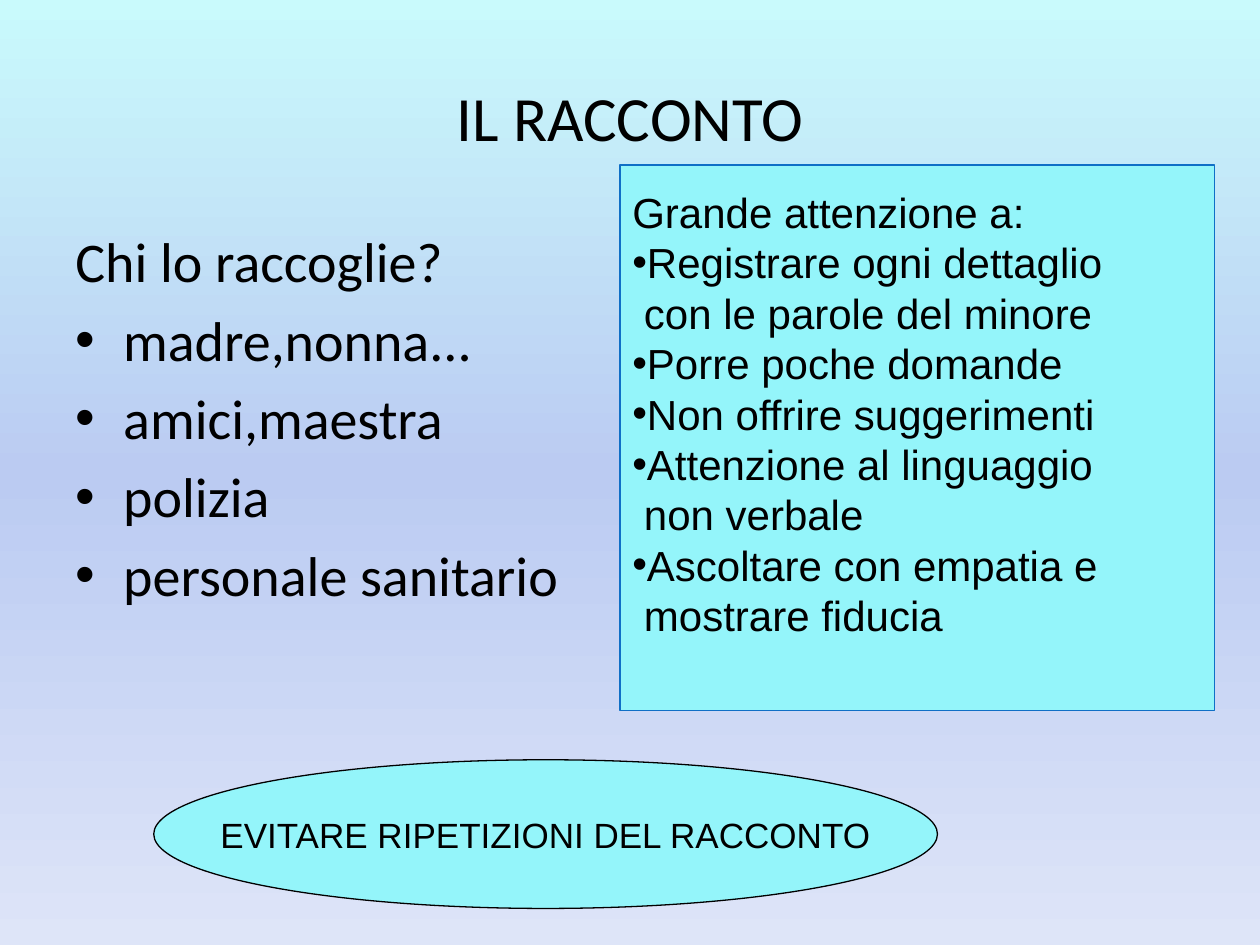
"""Build the slide IL RACCONTO."""
from lxml import etree
from pptx import Presentation
from pptx import util as u
from pptx.dml.color import RGBColor
from pptx.enum import shapes, text
from pptx.oxml import ns

TITLE = "IL RACCONTO"
COLLECTORS = [
    ("Chi lo raccoglie?", False),
    ("madre,nonna...", True),
    ("amici,maestra", True),
    ("polizia", True),
    ("personale sanitario", True),
]
ADVICE = [
    ("Grande attenzione a:", False),
    ("Registrare ogni dettaglio", True),
    (" con le parole del minore", False),
    ("Porre poche domande", True),
    ("Non offrire suggerimenti", True),
    ("Attenzione al linguaggio", True),
    (" non verbale", False),
    ("Ascoltare con empatia e", True),
    (" mostrare fiducia", False),
]
WARNING = "EVITARE RIPETIZIONI DEL RACCONTO"
BACKGROUND = [(0, "C9FAFC"), (50, "BBCBF2"), (100, "DEE5F8")]
BLACK, AQUA, BLUE = "000000", "94F5FA", "0F6FC6"
MIDDLE, TOP = text.MSO_ANCHOR.MIDDLE, text.MSO_ANCHOR.TOP
CENTER, LEFT = text.PP_ALIGN.CENTER, text.PP_ALIGN.LEFT


def color(value):
    return RGBColor.from_string(value)


def paint_background(s, stops):
    fill = s.background.fill
    fill.gradient()
    fill.gradient_angle = 270
    stop_list = s.element.find(".//" + ns.qn("a:gsLst"))
    for old in list(stop_list):
        stop_list.remove(old)
    for position, value in stops:
        stop = etree.SubElement(stop_list, ns.qn("a:gs"), pos=str(position * 1000))
        etree.SubElement(stop, ns.qn("a:srgbClr"), val=value)


def write(shape, lines, font, size, align=LEFT, anchor=TOP, indent=0, before=0):
    tf = shape.text_frame
    tf.word_wrap = True
    tf.vertical_anchor = anchor
    for i, (line, bulleted) in enumerate(lines):
        p = tf.add_paragraph() if i else tf.paragraphs[0]
        p.text = line
        p.alignment = align
        p.space_before = u.Pt(before)
        p.font.name, p.font.size = font, u.Pt(size)
        p.font.color.rgb = color(BLACK)
        pr = p._p.get_or_add_pPr()
        pr.set("marL", str(u.Inches(indent)))
        pr.set("indent", str(u.Inches(-indent)))
        if bulleted:
            bullet_font = etree.Element(ns.qn("a:buFont"), typeface="Arial")
            bullet = etree.Element(ns.qn("a:buChar"), char="•")
            pr.find(ns.qn("a:defRPr")).addprevious(bullet_font)
            bullet_font.addnext(bullet)
    return tf


def add_text(s, box):
    return s.shapes.add_textbox(*map(u.Inches, box))


def add_panel(s, kind, box, line):
    sp = s.shapes.add_shape(kind, *map(u.Inches, box))
    sp.shadow.inherit = False
    sp.fill.solid()
    sp.fill.fore_color.rgb = color(AQUA)
    sp.line.color.rgb = color(line)
    sp.line.width = u.Pt(0.75)
    return sp


def main():
    prs = Presentation()
    prs.slide_width, prs.slide_height = u.Inches(10), u.Inches(7.5)
    s = prs.slides.add_slide(prs.slide_layouts[6])
    paint_background(s, BACKGROUND)

    title = add_text(s, (0.5, 0.3, 9, 1.25))
    write(title, [(TITLE, False)], "Calibri", 36, CENTER, MIDDLE)

    collectors = add_text(s, (0.5, 1.75, 9, 4.95))
    write(collectors, COLLECTORS, "Calibri", 32, indent=0.38, before=6.4)

    advice = add_panel(s, shapes.MSO_SHAPE.RECTANGLE, (4.92, 1.31, 4.72, 4.33), BLUE)
    tf = write(advice, ADVICE, "Arial", 24)
    tf.margin_top = u.Inches(0.17)

    warning = add_panel(s, shapes.MSO_SHAPE.OVAL, (1.22, 6.03, 6.22, 1.18), BLACK)
    tf = write(warning, [(WARNING, False)], "Arial", 20, CENTER, MIDDLE)
    tf.margin_left = tf.margin_right = 0
    tf.word_wrap = False

    prs.save("out.pptx")


if __name__ == "__main__":
    main()
